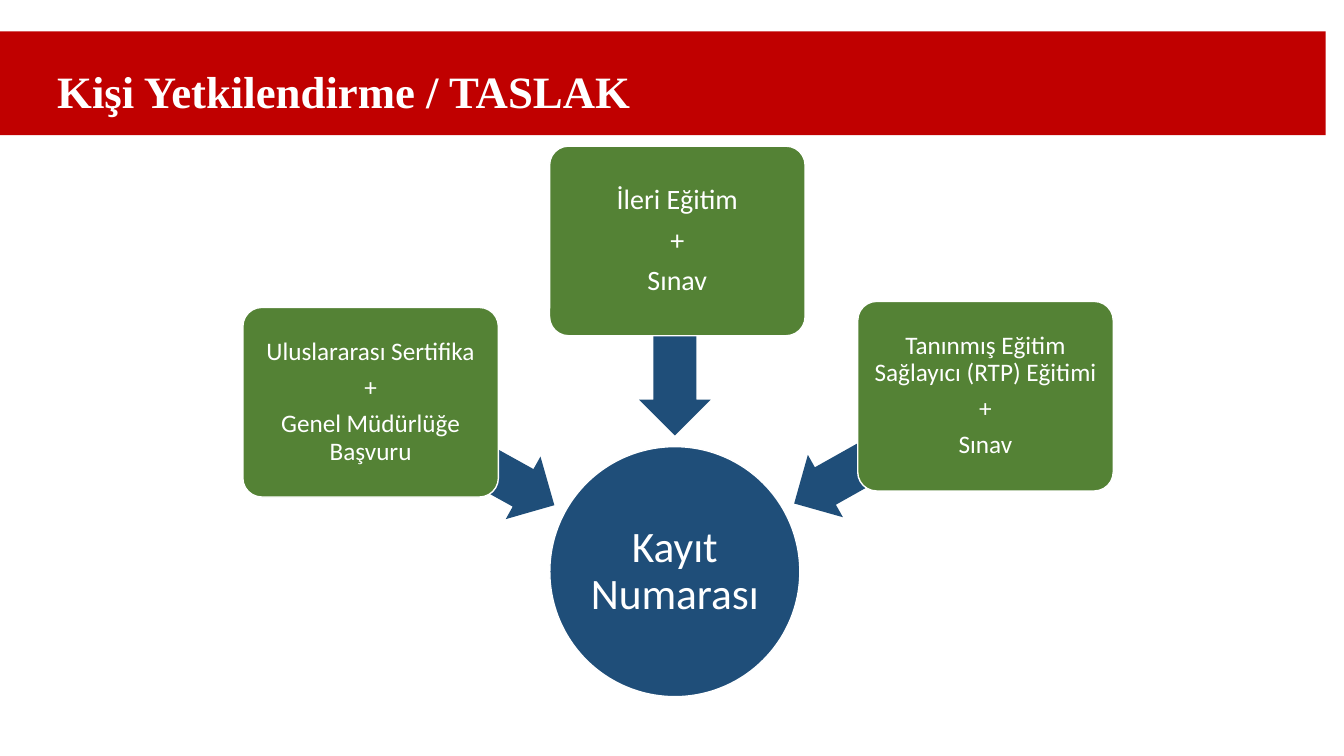
from pptx import Presentation
from pptx.dml.color import RGBColor
from pptx.enum.shapes import MSO_SHAPE as Preset
from pptx.enum.text import MSO_ANCHOR as Anchor, PP_ALIGN as Align
from pptx.util import Pt

RED = RGBColor(0xC0, 0x00, 0x00)
BLUE = RGBColor(0x1F, 0x4E, 0x79)
GREEN = RGBColor(0x54, 0x82, 0x35)
WHITE = RGBColor(0xFF, 0xFF, 0xFF)

BOX_SIZE = (182.5, 135.4)
ARROW_HEIGHT = 51.1

# Arrow: left, top, length, rotation. Box: left, top, text size, paragraphs.
ROUTES = [
    ((254.9, 298.8, 150.5, 209),
     (173.5, 219.6, 18, ["Uluslararası Sertifika", "+", "Genel Müdürlüğe Başvuru"])),
    ((412.6, 216, 139, 270),
     (392.6, 104.4, 20, ["İleri Eğitim", "+", "Sınav"])),
    ((557.3, 295.9, 156.2, 330.7),
     (612.7, 215.3, 18, ["Tanınmış Eğitim Sağlayıcı (RTP) Eğitimi", "+", "Sınav"])),
]


class SlideBuilder:
    title_font = "Times New Roman"
    body_font = "Calibri"
    line_spacing = 0.9
    space_after = 0.35  # share of the text size

    def __init__(self, slide):
        self.slide = slide

    def add_preset(self, preset, left, top, width, height, fill, outlined=False):
        shape = self.slide.shapes.add_shape(
            preset, Pt(left), Pt(top), Pt(width), Pt(height))
        shape.shadow.inherit = False
        shape.fill.solid()
        shape.fill.fore_color.rgb = fill
        if outlined:
            shape.line.color.rgb = WHITE
            shape.line.width = Pt(1)
        else:
            shape.line.fill.background()
        return shape

    def add_title(self, text, left, top, width, height):
        box = self.slide.shapes.add_textbox(Pt(left), Pt(top), Pt(width), Pt(height))
        frame = box.text_frame
        frame.word_wrap = True
        frame.vertical_anchor = Anchor.MIDDLE
        paragraph = frame.paragraphs[0]
        paragraph.text = text
        paragraph.line_spacing = self.line_spacing
        self.set_font(paragraph, self.title_font, 32)
        paragraph.font.bold = True

    def add_node(self, preset, left, top, width, height, fill, size, lines, inset):
        """Draw an outlined shape with centred text and return it."""
        shape = self.add_preset(preset, left, top, width, height, fill, outlined=True)
        frame = shape.text_frame
        frame.word_wrap = True
        frame.vertical_anchor = Anchor.MIDDLE
        frame.margin_left = frame.margin_right = Pt(inset)
        frame.margin_top = frame.margin_bottom = Pt(inset)
        frame.text = "\n".join(lines)
        for paragraph in frame.paragraphs:
            paragraph.alignment = Align.CENTER
            paragraph.line_spacing = self.line_spacing
            paragraph.space_after = Pt(size * self.space_after)
            self.set_font(paragraph, self.body_font, size)
        return shape

    def add_arrow(self, left, top, length, rotation):
        arrow = self.add_preset(Preset.LEFT_ARROW, left, top, length, ARROW_HEIGHT, BLUE)
        arrow.adjustments[0] = 0.6
        arrow.adjustments[1] = 0.5
        arrow.rotation = rotation

    def add_box(self, left, top, size, lines):
        box = self.add_node(
            Preset.ROUNDED_RECTANGLE, left, top, *BOX_SIZE, GREEN, size, lines, inset=2.7)
        box.adjustments[0] = 0.1

    @staticmethod
    def set_font(paragraph, name, size):
        paragraph.font.name = name
        paragraph.font.size = Pt(size)
        paragraph.font.color.rgb = WHITE


def main():
    presentation = Presentation()
    presentation.slide_width = Pt(960)
    presentation.slide_height = Pt(540)
    slide = presentation.slides.add_slide(presentation.slide_layouts[6])

    builder = SlideBuilder(slide)
    builder.add_preset(Preset.RECTANGLE, -13, 22.4, 960, 74.2, RED)
    builder.add_title("Kişi Yetkilendirme / TASLAK", 33.8, 18.7, 724.3, 97.2)
    builder.add_node(Preset.OVAL, 392.7, 319, 178.6, 178.6, BLUE, 31,
                     ["Kayıt Numarası"], inset=1.5)
    for arrow, box in ROUTES:
        builder.add_arrow(*arrow)
        builder.add_box(*box)

    presentation.save("out.pptx")


if __name__ == "__main__":
    main()
